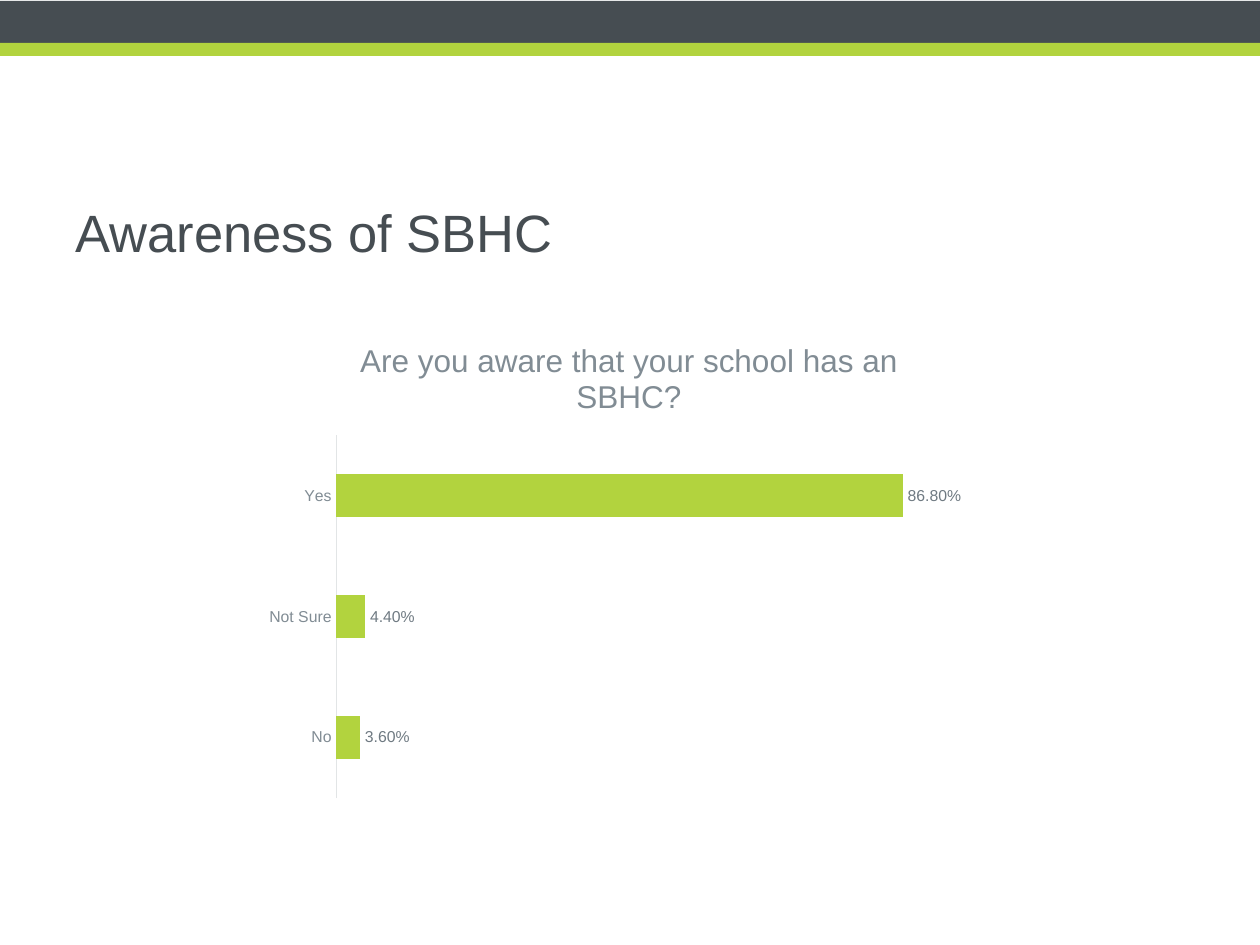
from lxml.etree import SubElement
from pptx import Presentation
from pptx.chart.data import CategoryChartData
from pptx.dml.color import RGBColor
from pptx.enum.chart import XL_CHART_TYPE as Kind, XL_LABEL_POSITION as Spot
from pptx.enum.chart import XL_TICK_MARK as Tick
from pptx.enum.shapes import MSO_SHAPE as Form
from pptx.enum.text import MSO_ANCHOR as Anchor, PP_ALIGN as Align
from pptx.oxml.ns import qn
from pptx.util import Inches, Pt

PX = Inches(1) // 126
FACE = "Arial"
DARK = RGBColor(0x46, 0x4D, 0x52)
LIME = RGBColor(0xB2, 0xD3, 0x3E)
GRAY = RGBColor(0x81, 0x8C, 0x94)
SLATE = RGBColor(0x6F, 0x7A, 0x82)
PALE = RGBColor(0xE2, 0xE5, 0xE6)


def scale(*box):
    return [n * PX for n in box]


def style(font, size, color):
    font.name = FACE
    font.size = Pt(size)
    font.bold = False
    font.color.rgb = color


def add_band(slide, top, height, color):
    band = slide.shapes.add_shape(Form.RECTANGLE, *scale(0, top, 1260, height))
    band.shadow.inherit = False
    band.fill.solid()
    band.fill.fore_color.rgb = color
    band.line.fill.background()


def set_title(slide, text):
    title = slide.shapes.title
    title.left, title.top, title.width, title.height = scale(63, 158, 1134, 147)
    frame = title.text_frame
    frame.text = text
    frame.vertical_anchor = Anchor.MIDDLE
    para = frame.paragraphs[0]
    para.alignment = Align.LEFT
    style(para.font, 30, DARK)


def place_plot(chart, **parts):
    """Fix the inner plot area at fractions of the chart's size."""
    plot = chart._chartSpace.chart.plotArea
    layout = plot.find(qn("c:layout"))
    if layout is None:
        layout = SubElement(plot, qn("c:layout"))
        plot.insert(0, layout)
    manual = SubElement(layout, qn("c:manualLayout"))
    modes = {"layoutTarget": "inner", "xMode": "edge", "yMode": "edge"}
    for tag, val in {**modes, **parts}.items():
        SubElement(manual, qn(f"c:{tag}")).set("val", str(val))


def add_bars(slide, title, rows):
    data = CategoryChartData(number_format="0.00%")
    data.categories = list(rows)
    data.add_series("Series 1", list(rows.values()))
    box = scale(254, 318, 750, 490)
    chart = slide.shapes.add_chart(Kind.BAR_CLUSTERED, *box, data).chart
    style(chart.font, 10, DARK)
    chart.has_legend = False

    chart.has_title = True
    frame = chart.chart_title.text_frame
    frame.text = title
    style(frame.paragraphs[0].font, 18, GRAY)
    chart.chart_title.include_in_layout = False
    place_plot(chart, x=0.11, y=0.24, w=0.87, h=0.74)

    cats = chart.category_axis
    cats.major_tick_mark = cats.minor_tick_mark = Tick.NONE
    cats.format.line.color.rgb = PALE
    cats.format.line.width = Pt(0.75)
    style(cats.tick_labels.font, 9, GRAY)
    vals = chart.value_axis
    vals.minimum_scale, vals.maximum_scale = 0, 1
    vals.has_major_gridlines = False
    vals.visible = False

    plot = chart.plots[0]
    plot.gap_width = 182
    plot.vary_by_categories = False
    fill = plot.series[0].format.fill
    fill.solid()
    fill.fore_color.rgb = LIME
    plot.has_data_labels = True
    labels = plot.data_labels
    labels.show_value = True
    labels.number_format = "0.00%"
    labels.number_format_is_linked = False
    labels.position = Spot.OUTSIDE_END
    style(labels.font, 9, SLATE)


def main():
    deck = Presentation()
    deck.slide_width, deck.slide_height = Inches(10), Inches(7.5)
    slide = deck.slides.add_slide(deck.slide_layouts[5])
    add_band(slide, 1, 42, DARK)
    add_band(slide, 43, 13, LIME)
    set_title(slide, "Awareness of SBHC")
    add_bars(slide, "Are you aware that your school has an SBHC?",
             {"No": 0.036, "Not Sure": 0.044, "Yes": 0.868})
    deck.save("out.pptx")


if __name__ == "__main__":
    main()
